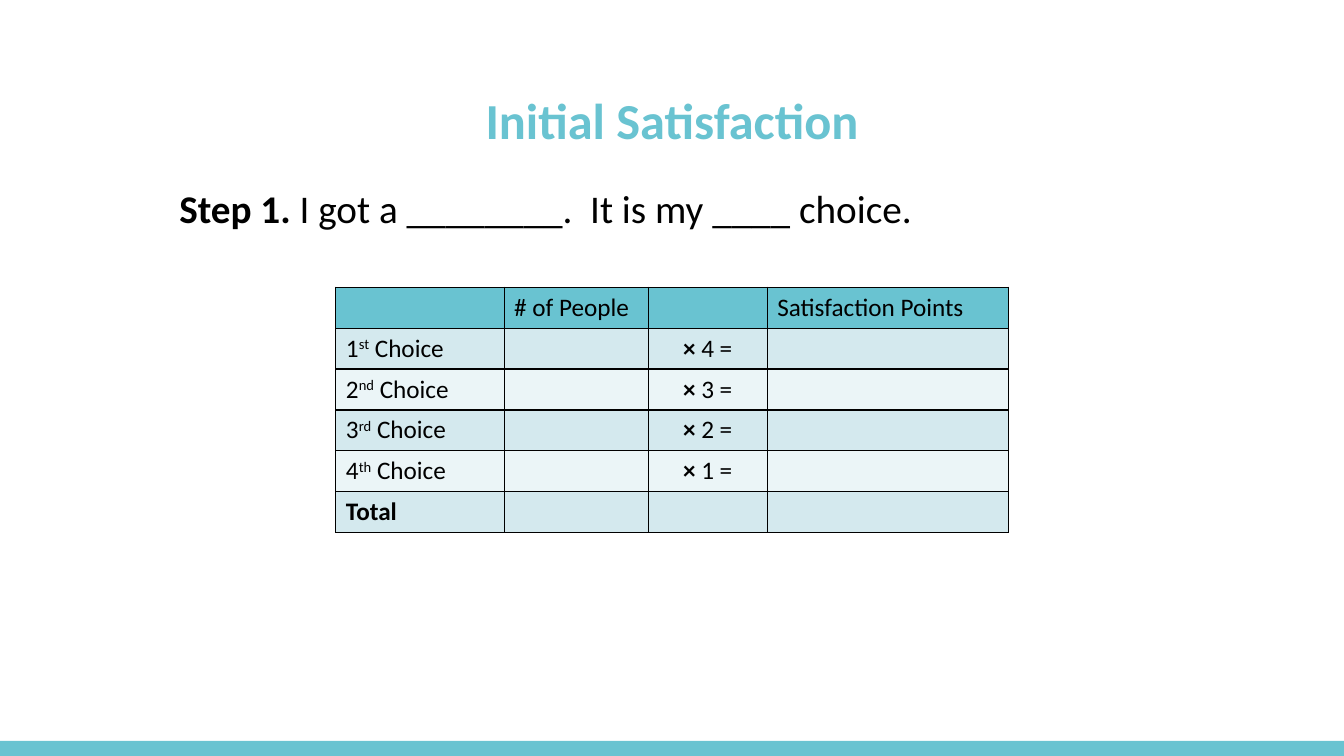
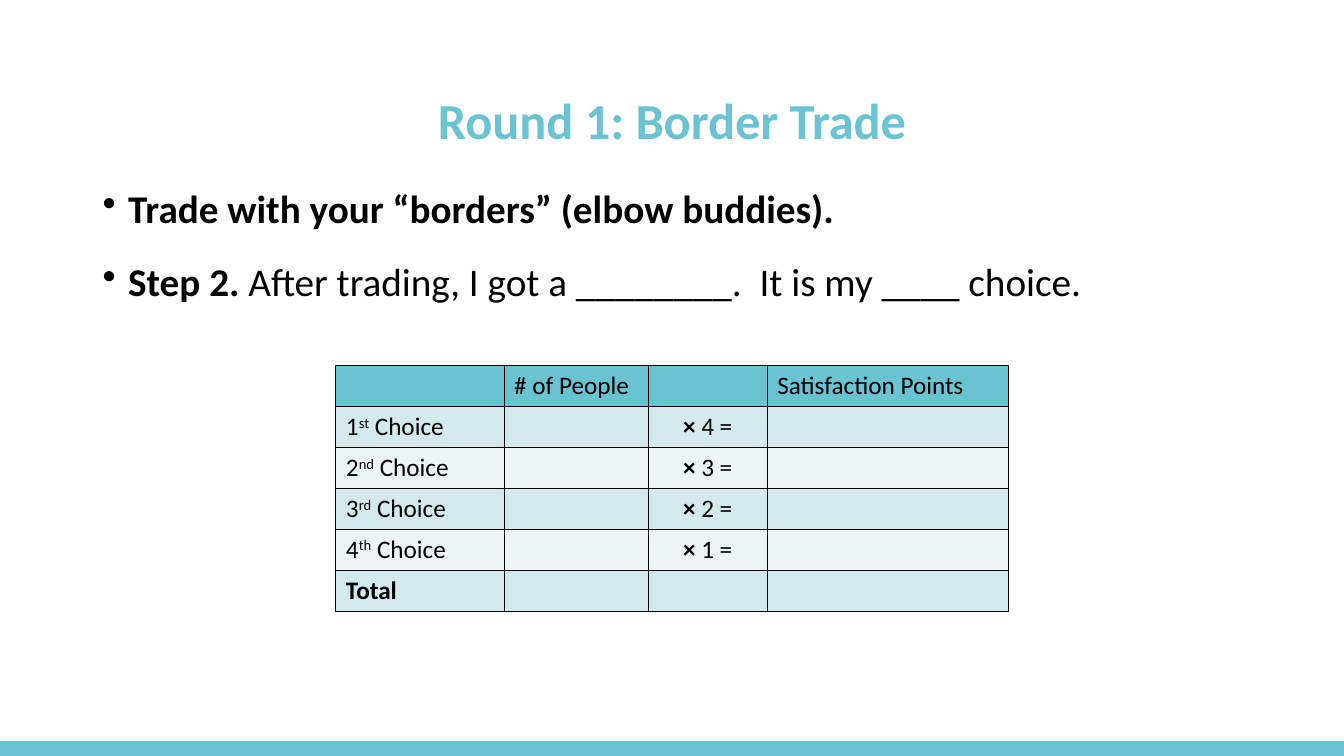
import dataclasses

import lxml.etree
import pptx
import pptx.dml.color
import pptx.enum.shapes
import pptx.enum.text
import pptx.oxml.ns
import pptx.util

Cm = pptx.util.Cm
Pt = pptx.util.Pt
ALIGN = pptx.enum.text.PP_ALIGN
ANCHOR = pptx.enum.text.MSO_ANCHOR


@dataclasses.dataclass(frozen=True)
class Theme:
    font: str = "Calibri"
    accent: str = "69C3D1"
    ink: str = "000000"
    bands: tuple = ("D4E9EE", "EBF5F7")
    title_size: int = 36
    body_size: int = 28
    table_size: int = 18
    border_width: int = 1
    line_spacing: float = 0.9


@dataclasses.dataclass(frozen=True)
class Box:
    left: float
    top: float
    width: float
    height: float

    def lengths(self):
        return [Cm(value) for value in dataclasses.astuple(self)]


THEME = Theme()
PAGE = Box(0, 0, 33.87, 19.05)
BAND = Box(0, 18.67, PAGE.width, 0.38)
TITLE = Box(2.34, 2.26, 29.2, 1.68)

COLUMN_WIDTHS = (4.24, 3.63, 3.0, 6.07)
ROW_HEIGHT = 1.03
ORDINALS = ("st", "nd", "rd", "th")

BOLD = {"bold": True}
PLAIN = {"bold": False}


def rgb(value):
    return pptx.dml.color.RGBColor.from_string(value)


def apply_formats(target, formats):
    for name, value in formats.items():
        setattr(target, name, value)


def add_element(parent, tag, **attributes):
    element = lxml.etree.SubElement(parent, pptx.oxml.ns.qn(tag))
    for name, value in attributes.items():
        element.set(name, str(value))
    return element


def write_runs(paragraph, runs, size, color, formats):
    """Fill a paragraph with (text, font formats) pairs."""
    apply_formats(paragraph, formats)
    for text, font_formats in runs:
        run = paragraph.add_run()
        run.text = text
        base = {"name": THEME.font, "size": Pt(size), "bold": False}
        apply_formats(run.font, base | font_formats)
        run.font.color.rgb = rgb(color)


def add_text_frame(slide, box, anchor):
    frame = slide.shapes.add_textbox(*box.lengths()).text_frame
    apply_formats(frame, {"word_wrap": True, "vertical_anchor": anchor})
    return frame


# Shared parts: bottom band and title
def add_frame(slide, title):
    band = slide.shapes.add_shape(
        pptx.enum.shapes.MSO_SHAPE.RECTANGLE, *BAND.lengths())
    band.shadow.inherit = False
    band.fill.solid()
    band.fill.fore_color.rgb = rgb(THEME.accent)
    band.line.fill.background()

    frame = add_text_frame(slide, TITLE, ANCHOR.MIDDLE)
    write_runs(frame.paragraphs[0], [(title, BOLD)], THEME.title_size, THEME.accent,
               {"alignment": ALIGN.CENTER, "line_spacing": THEME.line_spacing})


# Instructions above the table
def add_instructions(slide, box, paragraphs, bulleted):
    frame = add_text_frame(slide, box, ANCHOR.TOP)
    for index, runs in enumerate(paragraphs):
        paragraph = frame.paragraphs[0] if index == 0 else frame.add_paragraph()
        formats = {"line_spacing": THEME.line_spacing}
        if index > 0:
            formats["space_before"] = Pt(22)
        if bulleted:
            properties = paragraph._p.get_or_add_pPr()
            properties.set("marL", str(Cm(0.64)))
            properties.set("indent", str(-Cm(0.64)))
            add_element(properties, "a:buChar", char="•")
        write_runs(paragraph, runs, THEME.body_size, THEME.ink, formats)


# Satisfaction table
def table_rows():
    """Return the rows; each cell is a list of runs."""
    rows = [[[], [("# of People", PLAIN)], [], [("Satisfaction Points", PLAIN)]]]
    count = len(ORDINALS)
    for rank, suffix in enumerate(ORDINALS, start=1):
        choice = [(str(rank), PLAIN), (suffix, PLAIN), (" Choice", PLAIN)]
        points = [("×", BOLD), (f" {count + 1 - rank} =", PLAIN)]
        rows.append([choice, [], points, []])
    rows.append([[("Total", BOLD)], [], [], []])
    return rows


def style_cell(cell, fill):
    properties = cell._tc.get_or_add_tcPr()
    for side in ("a:lnL", "a:lnR", "a:lnT", "a:lnB"):
        line = add_element(properties, side, w=Pt(THEME.border_width))
        add_element(add_element(line, "a:solidFill"), "a:srgbClr", val=THEME.ink)
    cell.fill.solid()
    cell.fill.fore_color.rgb = rgb(fill)


def add_satisfaction_table(slide, left, top):
    rows = table_rows()
    box = Box(left, top, sum(COLUMN_WIDTHS), ROW_HEIGHT * len(rows))
    table = slide.shapes.add_table(
        len(rows), len(COLUMN_WIDTHS), *box.lengths()).table
    apply_formats(table, {"first_row": False, "horz_banding": False})
    for column, width in zip(table.columns, COLUMN_WIDTHS):
        column.width = Cm(width)

    for row_index, row in enumerate(rows):
        table.rows[row_index].height = Cm(ROW_HEIGHT)
        fill = THEME.accent if row_index == 0 else THEME.bands[(row_index - 1) % 2]
        for column_index, runs in enumerate(row):
            cell = table.cell(row_index, column_index)
            style_cell(cell, fill)
            paragraph = cell.text_frame.paragraphs[0]
            paragraph.font.size = Pt(THEME.table_size)
            alignment = ALIGN.CENTER if column_index == 2 else ALIGN.LEFT
            write_runs(paragraph, runs, THEME.table_size, THEME.ink,
                       {"alignment": alignment})
            for run in paragraph.runs:
                if run.text in ORDINALS:
                    run._r.get_or_add_rPr().set("baseline", "30000")


def add_step_slide(presentation, title, body, paragraphs, bulleted, table_top):
    slide = presentation.slides.add_slide(presentation.slide_layouts[6])
    add_frame(slide, title)
    add_instructions(slide, body, paragraphs, bulleted)
    table_left = (PAGE.width - sum(COLUMN_WIDTHS)) / 2
    add_satisfaction_table(slide, table_left, table_top)


def main():
    presentation = pptx.Presentation()
    apply_formats(presentation, {"slide_width": Cm(PAGE.width),
                                 "slide_height": Cm(PAGE.height)})
    add_step_slide(
        presentation, "Initial Satisfaction", Box(4.27, 4.65, 27.25, 12.1),
        [[("Step 1.", BOLD), (" I got a ________.  It is my ____ choice.", PLAIN)]],
        bulleted=False, table_top=7.24)
    add_step_slide(
        presentation, "Round 1: Border Trade", Box(2.34, 4.65, 29.2, 12.1),
        [[("Trade with your “borders” (elbow buddies).", BOLD)],
         [("Step 2.", BOLD),
          (" After trading, I got a ________.  It is my ____ choice.", PLAIN)]],
        bulleted=True, table_top=9.22)
    presentation.save("out.pptx")


if __name__ == "__main__":
    main()
